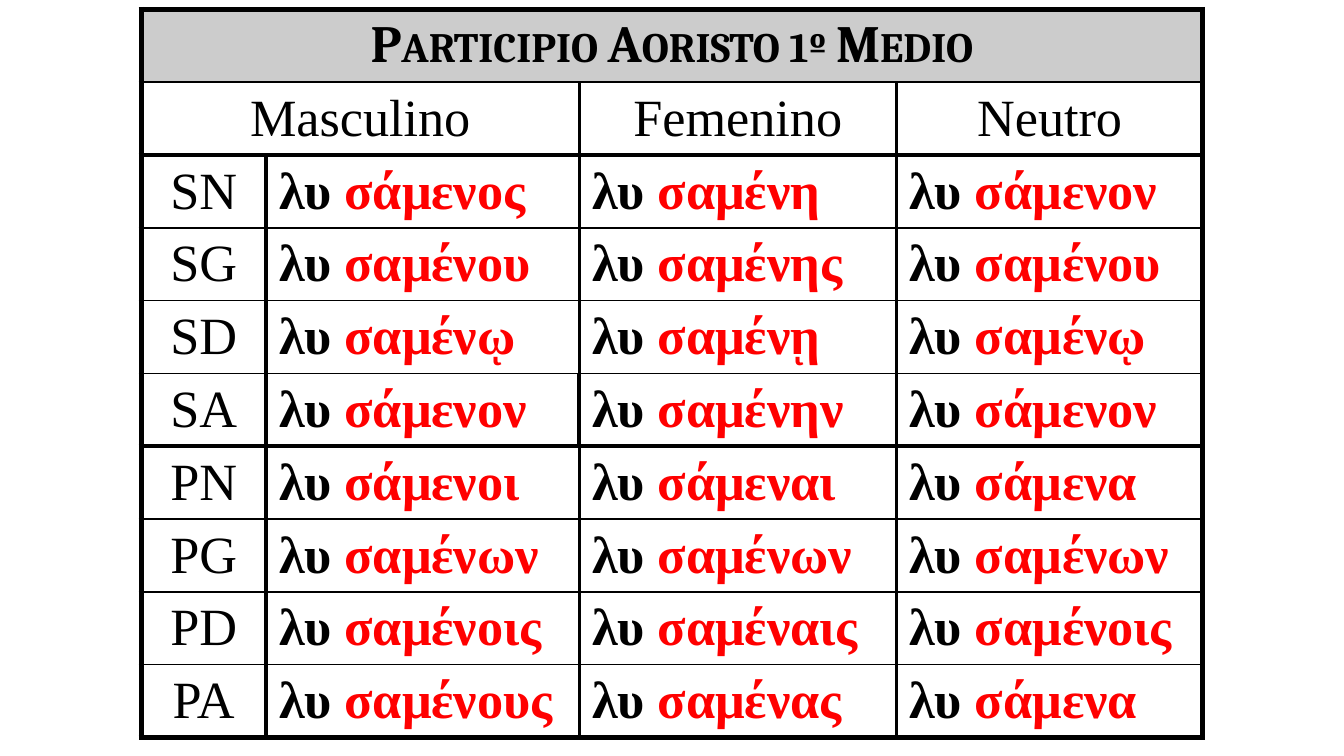
from dataclasses import dataclass

from lxml.etree import SubElement
from pptx import Presentation
from pptx.dml.color import RGBColor
from pptx.enum.text import MSO_ANCHOR as Anchor, PP_ALIGN as Align
from pptx.oxml.ns import qn
from pptx.util import Emu, Inches, Pt


@dataclass(frozen=True)
class Theme:
    """Colours, fonts and type size of the slide."""
    ink: str = "000000"
    mark: str = "FF0000"
    band: str = "CCCCCC"
    head: str = "Cambria"
    body: str = "Times New Roman"
    size: int = 28


THEME = Theme()
WIDE = Inches(10)
TALL = Emu(WIDE * 9 // 16)
TITLE = "Participio Aoristo 1º Medio"
GENDERS = ["Masculino", "Femenino", "Neutro"]
STEM = "λυ "
FORMS = {
    "SN": ["σάμενος", "σαμένη", "σάμενον"],
    "SG": ["σαμένου", "σαμένης", "σαμένου"],
    "SD": ["σαμένῳ", "σαμένῃ", "σαμένῳ"],
    "SA": ["σάμενον", "σαμένην", "σάμενον"],
    "PN": ["σάμενοι", "σάμεναι", "σάμενα"],
    "PG": ["σαμένων", "σαμένων", "σαμένων"],
    "PD": ["σαμένοις", "σαμέναις", "σαμένοις"],
    "PA": ["σαμένους", "σαμένας", "σάμενα"],
}
COLS = [0.93, 2.33, 2.36, 2.28]
ROWS = len(FORMS) + 2
LEFT, TOP, HIGH = 1.05, 0.07, 5.42
RULES = [3, 1, 2, 1, 1, 1, 2.25, 1, 1, 1, 3]
SIDES = {0: [3, 0, 0, 0, 3], 1: [3, 0, 2, 2, 3], 5: [3, 2.25, 2.25, 2.25, 3]}
PLAIN = [3, 2, 2, 2, 3]


def style(run, font=THEME.body, color=THEME.ink, bold=False):
    """Set the font of one run."""
    run.font.name = font
    run.font.size = Pt(THEME.size)
    run.font.bold = bold
    run.font.color.rgb = RGBColor.from_string(color)


def label(cell, text, **look):
    """Write a centred heading with a hanging indent."""
    cell.margin_top = cell.margin_bottom = Inches(0.04)
    para = cell.text_frame.paragraphs[0]
    para.text = text
    para.alignment = Align.CENTER
    props = para._p.get_or_add_pPr()
    props.set("marL", str(Inches(0.38)))
    props.set("indent", str(-Inches(0.38)))
    style(para.runs[0], **look)
    return para.runs[0]


def form(cell, ending):
    """Write the stem and its marked ending."""
    cell.margin_top = cell.margin_bottom = 0
    para = cell.text_frame.paragraphs[0]
    for text, color in [(STEM, THEME.ink), (ending, THEME.mark)]:
        run = para.add_run()
        run.text = text
        style(run, color=color, bold=True)


def edge(cell, tag, width):
    """Draw one side of a cell, or hide it at zero width."""
    line = SubElement(cell._tc.get_or_add_tcPr(), qn(tag), w=str(Pt(width)))
    if width:
        fill = SubElement(line, qn("a:solidFill"))
        SubElement(fill, qn("a:srgbClr"), val=THEME.ink)
    else:
        SubElement(line, qn("a:noFill"))


def frame(cell, row, col):
    """Give a cell its margins, borders and fill."""
    sides = SIDES.get(row, PLAIN)
    cell.margin_left = cell.margin_right = Inches(0.1)
    cell.vertical_anchor = Anchor.MIDDLE
    edge(cell, "a:lnL", sides[col])
    edge(cell, "a:lnR", sides[col + cell.span_width])
    edge(cell, "a:lnT", RULES[row])
    edge(cell, "a:lnB", RULES[row + 1])
    if row == 0:
        cell.fill.solid()
        cell.fill.fore_color.rgb = RGBColor.from_string(THEME.band)
    else:
        cell.fill.background()


def grid(slide):
    """Add the empty table with its merged headings."""
    shape = slide.shapes.add_table(
        ROWS, len(COLS), Inches(LEFT), Inches(TOP), Inches(sum(COLS)), Inches(HIGH))
    table = shape.table
    table.first_row = table.horz_banding = False
    for col, width in zip(table.columns, COLS):
        col.width = Inches(width)
    for row in table.rows:
        row.height = Emu(Inches(HIGH) // ROWS)
    table.cell(0, 0).merge(table.cell(0, len(COLS) - 1))
    table.cell(1, 0).merge(table.cell(1, 1))
    for r in range(ROWS):
        for c in range(len(COLS)):
            frame(table.cell(r, c), r, c)
    return table


def main():
    """Build the slide and save it."""
    deck = Presentation()
    deck.slide_width, deck.slide_height = WIDE, TALL
    table = grid(deck.slides.add_slide(deck.slide_layouts[6]))
    title = label(table.cell(0, 0), TITLE, font=THEME.head, bold=True)
    title._r.get_or_add_rPr().set("cap", "small")
    for col, name in zip([0, 2, 3], GENDERS):
        label(table.cell(1, col), name)
    for row, (case, endings) in enumerate(FORMS.items(), 2):
        label(table.cell(row, 0), case)
        for col, ending in enumerate(endings, 1):
            form(table.cell(row, col), ending)
    deck.save("out.pptx")


if __name__ == "__main__":
    main()
